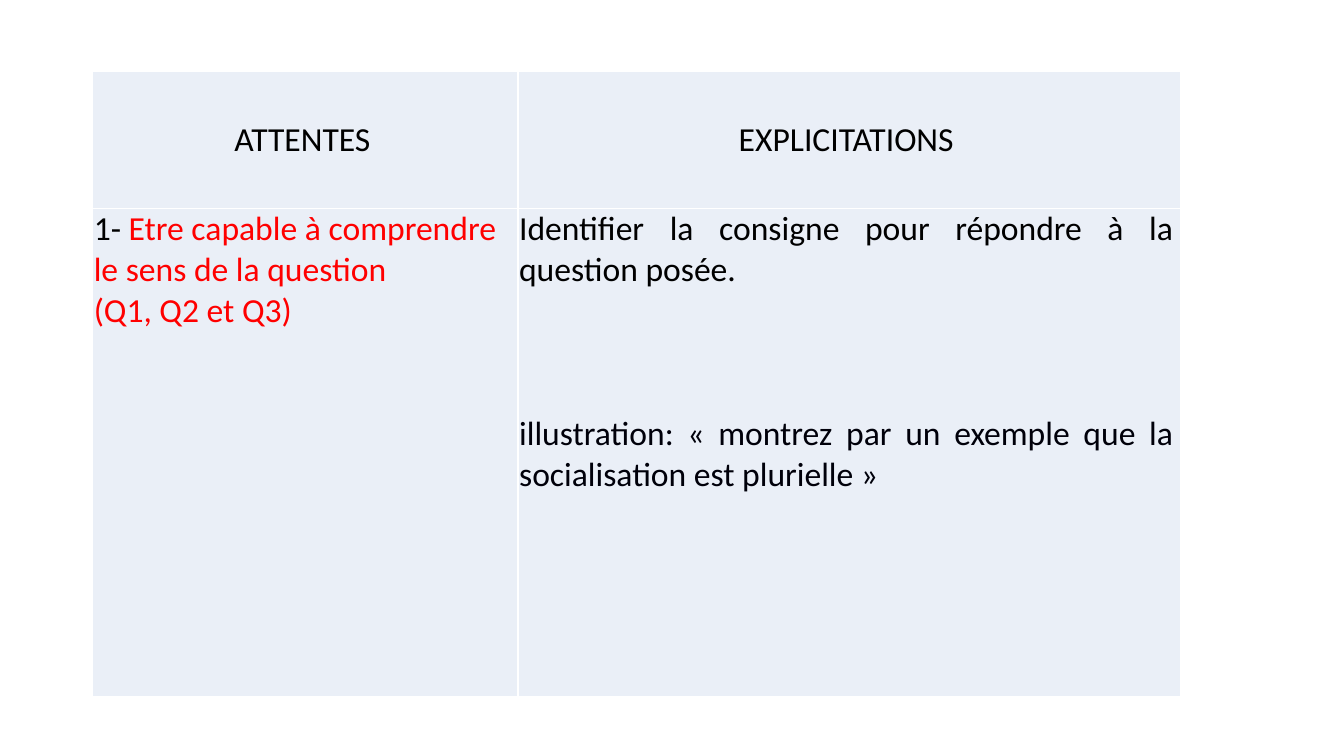
from dataclasses import dataclass

from lxml.etree import SubElement
from pptx import Presentation
from pptx.dml.color import RGBColor
from pptx.enum.text import MSO_ANCHOR as Anchor, PP_ALIGN as Align
from pptx.oxml.ns import qn
from pptx.util import Pt


@dataclass(frozen=True)
class Theme:
    font: str = "Calibri"
    size: float = 24
    ink: str = "000000"
    accent: str = "FF0000"
    example: str = "00000A"
    cell: str = "EAEFF7"
    border: str = "FFFFFF"
    border_width: float = 1


theme = Theme()


def write(paragraph, text, color=theme.ink, align=Align.LEFT, before=0):
    paragraph.alignment = align
    paragraph.space_before = Pt(before)
    run = paragraph.add_run()
    run.text = text
    run.font.name = theme.font
    run.font.size = Pt(theme.size)
    run.font.bold = False
    run.font.color.rgb = RGBColor.from_string(color)


def style_cell(cell, anchor):
    cell.margin_left, cell.margin_right = Pt(0.75), Pt(5)
    cell.margin_top = cell.margin_bottom = 0
    cell.vertical_anchor = anchor
    properties = cell._tc.get_or_add_tcPr()
    for side in ("a:lnL", "a:lnR", "a:lnT", "a:lnB"):
        line = SubElement(properties, qn(side), w=str(Pt(theme.border_width)))
        paint = SubElement(line, qn("a:solidFill"))
        SubElement(paint, qn("a:srgbClr"), val=theme.border)
    cell.fill.solid()
    cell.fill.fore_color.rgb = RGBColor.from_string(theme.cell)


deck = Presentation()
deck.slide_width, deck.slide_height = Pt(960), Pt(540)
slide = deck.slides.add_slide(deck.slide_layouts[6])

column_widths = (303.84, 473.04)
row_heights = (97.92, 348.48)
expectations = slide.shapes.add_table(
    2, 2, Pt(66.24), Pt(51.12), Pt(sum(column_widths)), Pt(sum(row_heights))
).table
for column, width in zip(expectations.columns, column_widths):
    column.width = Pt(width)
for row, height, anchor in zip(
    expectations.rows, row_heights, (Anchor.MIDDLE, Anchor.TOP)
):
    row.height = Pt(height)
    for cell in row.cells:
        style_cell(cell, anchor)

for index, heading in enumerate(("ATTENTES", "EXPLICITATIONS")):
    header = expectations.cell(0, index).text_frame
    write(header.paragraphs[0], heading, align=Align.CENTER)

skill = expectations.cell(1, 0).text_frame
write(skill.paragraphs[0], "1- ")
write(
    skill.paragraphs[0],
    "Etre capable à comprendre le sens de la question",
    color=theme.accent,
)
write(skill.add_paragraph(), "(Q1, Q2 et Q3)", color=theme.accent)

explanation = expectations.cell(1, 1).text_frame
write(
    explanation.paragraphs[0],
    "Identifier la consigne pour répondre à la question posée.",
    align=Align.JUSTIFY,
)
write(
    explanation.add_paragraph(),
    "illustration: « montrez par un exemple que la socialisation est plurielle »",
    color=theme.example,
    align=Align.JUSTIFY,
    before=88,
)

deck.save("out.pptx")
